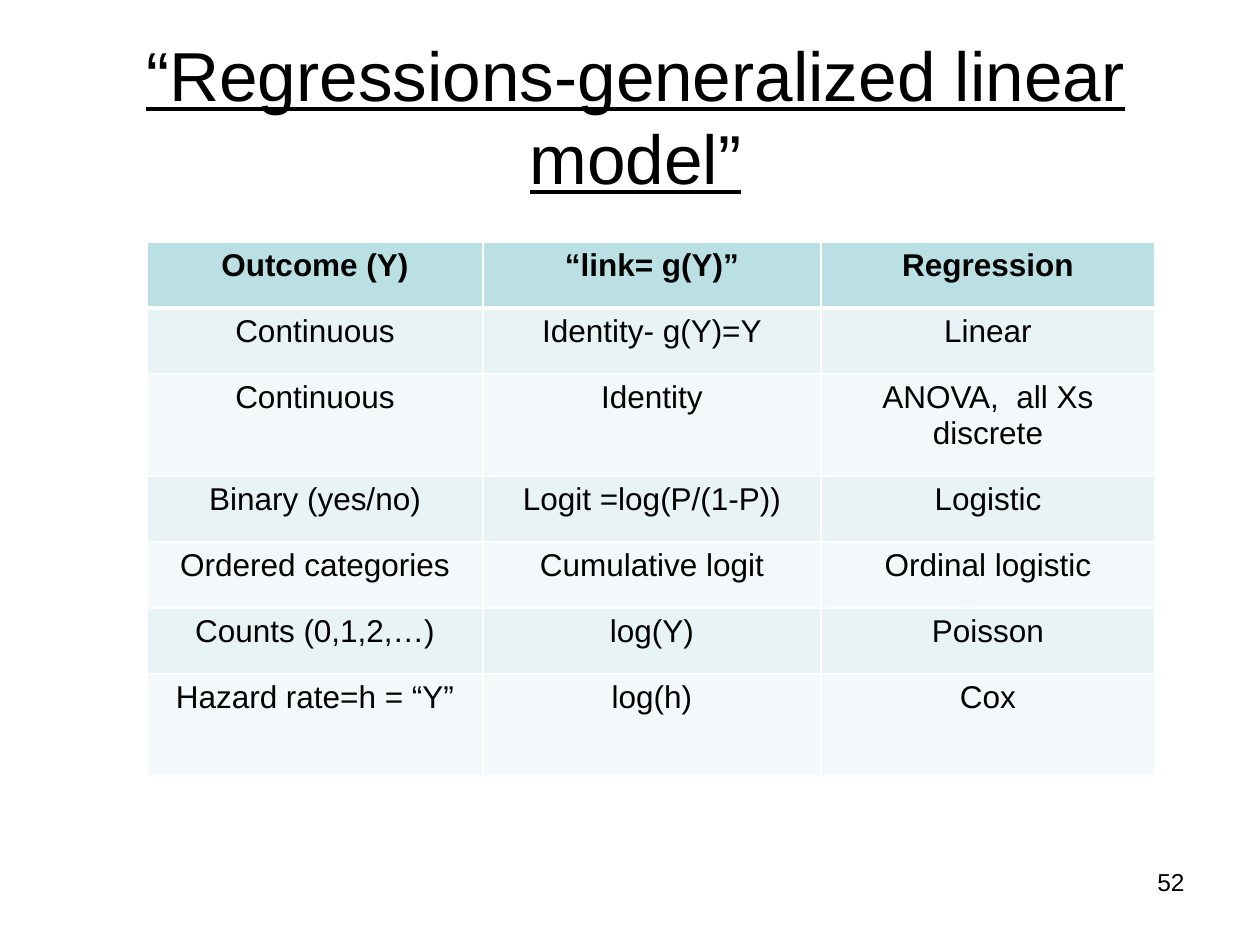
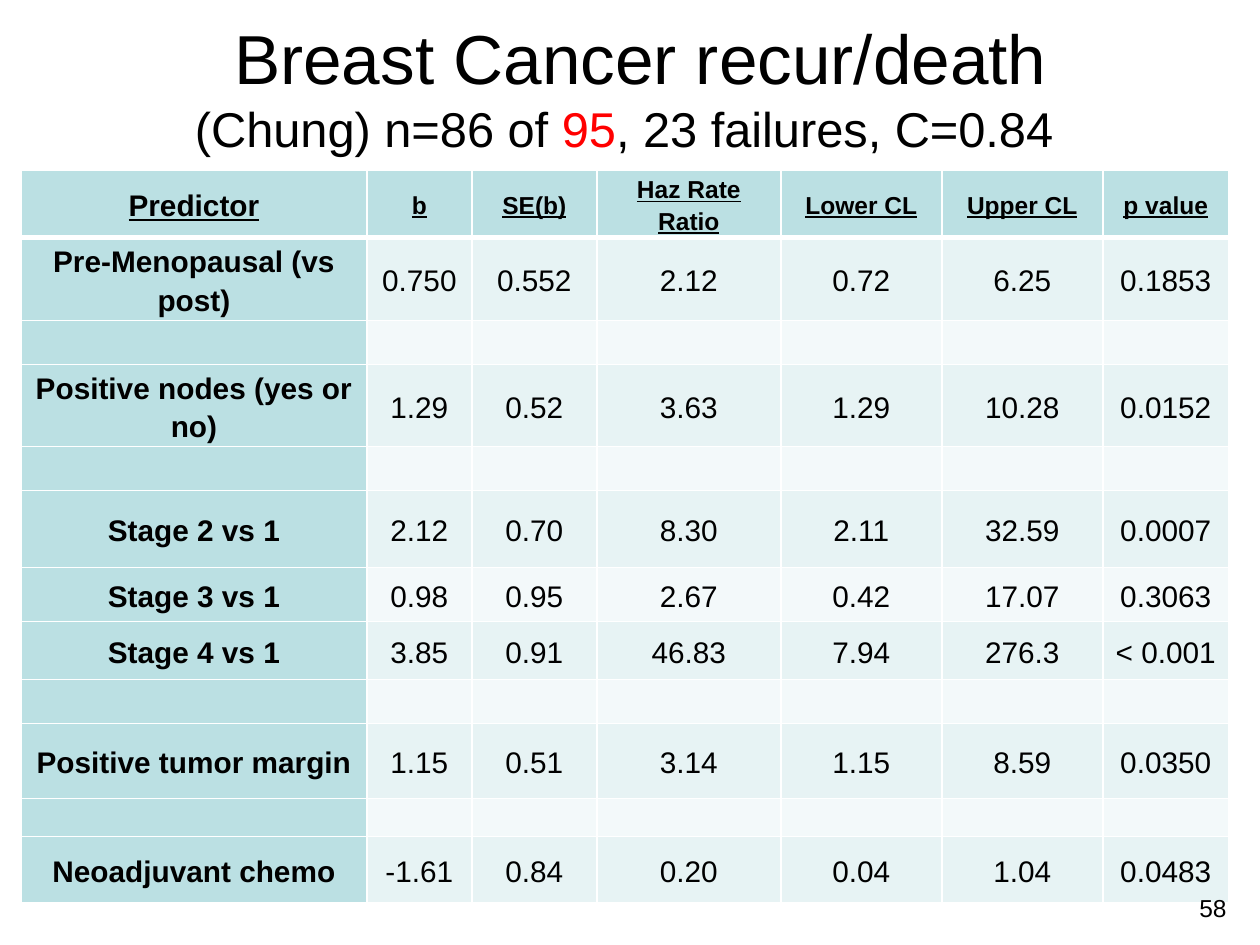
from lxml import etree
from pptx import Presentation, util as u
from pptx.dml.color import RGBColor
from pptx.enum import text as t
from pptx.oxml import ns

SCALE = u.Inches(1) / 126
FONT = "Arial"
BLACK = RGBColor(0, 0, 0)
RED = RGBColor(0xFF, 0, 0)
WHITE = RGBColor(0xFF, 0xFF, 0xFF)
TEAL = RGBColor(0xBB, 0xE0, 0xE3)
BANDS = RGBColor(0xE7, 0xF3, 0xF4), RGBColor(0xF3, 0xF9, 0xFA)
BIG, SMALL = 39.6, 27.9

LINKS = [
    ("Outcome (Y)", "“link= g(Y)”", "Regression"),
    ("Continuous", "Identity- g(Y)=Y", "Linear"),
    ("Continuous", "Identity", "ANOVA,  all Xs discrete"),
    ("Binary (yes/no)", "Logit =log(P/(1-P))", "Logistic"),
    ("Ordered categories", "Cumulative logit", "Ordinal logistic"),
    ("Counts (0,1,2,…)", "log(Y)", "Poisson"),
    ("Hazard rate=h = “Y”", "log(h)", "Cox"),
]

GAP = ("",) * 7
RISKS = [
    ("Predictor", "b", "SE(b)", "Haz Rate Ratio", "Lower CL", "Upper CL",
     "p value"),
    ("Pre-Menopausal (vs post)", "0.750", "0.552", "2.12", "0.72", "6.25",
     "0.1853"),
    GAP,
    ("Positive nodes (yes or no)", "1.29", "0.52", "3.63", "1.29", "10.28",
     "0.0152"),
    GAP,
    ("Stage 2 vs 1", "2.12", "0.70", "8.30", "2.11", "32.59", "0.0007"),
    ("Stage 3 vs 1", "0.98", "0.95", "2.67", "0.42", "17.07", "0.3063"),
    ("Stage 4 vs 1", "3.85", "0.91", "46.83", "7.94", "276.3", "< 0.001"),
    GAP,
    ("Positive tumor margin", "1.15", "0.51", "3.14", "1.15", "8.59",
     "0.0350"),
    GAP,
    ("Neoadjuvant chemo", "-1.61", "0.84", "0.20", "0.04", "1.04", "0.0483"),
]


def px(n):
    return u.Emu(round(n * SCALE))


def edge(cell, head):
    """Draw white cell borders, with a thick rule under the head row."""
    props = cell._tc.get_or_add_tcPr()
    for i, side in enumerate(("lnL", "lnR", "lnT", "lnB")):
        wide = 3 if head and side == "lnB" else 1
        line = etree.Element(ns.qn("a:" + side), w=str(u.Pt(wide)))
        fill = etree.SubElement(line, ns.qn("a:solidFill"))
        etree.SubElement(fill, ns.qn("a:srgbClr"), val=str(WHITE))
        props.insert(i, line)


class Deck:
    def __init__(self):
        self.prs = Presentation()
        self.prs.slide_width, self.prs.slide_height = px(1260), px(945)

    def page(self):
        self.slide = self.prs.slides.add_slide(self.prs.slide_layouts[6])

    def run(self, para, words, size, color=BLACK, bold=False, under=False):
        run = para.add_run()
        run.text = words
        font = run.font
        font.name, font.size, font.color.rgb = FONT, u.Pt(size), color
        font.bold, font.underline = bold, under

    def box(self, x, y, w, h, align):
        frame = self.slide.shapes.add_textbox(*map(px, (x, y, w, h))).text_frame
        frame.word_wrap = True
        para = frame.paragraphs[0]
        para.alignment = align
        return frame, para

    def title(self, x, y, w, h, *lines, under=False):
        """Each line is a list of (words, size, color) runs."""
        frame, para = self.box(x, y, w, h, t.PP_ALIGN.CENTER)
        frame.vertical_anchor = t.MSO_ANCHOR.MIDDLE
        for i, line in enumerate(lines):
            if i:
                para.add_line_break()
            for words, size, color in line:
                self.run(para, words, size, color, under=under)

    def number(self, x, y, w, num):
        para = self.box(x, y, w, 66, t.PP_ALIGN.RIGHT)[1]
        self.run(para, str(num), 14)

    def table(self, x, y, cols, rows, data, size, label=False, dense=False):
        """label tints the first column; dense trims insets, centres rows."""
        grid = self.slide.shapes.add_table(
            len(rows), len(cols), px(x), px(y), px(sum(cols)), px(sum(rows))
        ).table
        grid.first_row = grid.horz_banding = False
        for col, w in zip(grid.columns, cols):
            col.width = px(w)
        for r, (row, h) in enumerate(zip(data, rows)):
            grid.rows[r].height = px(h)
            for c, words in enumerate(row):
                cell = grid.cell(r, c)
                strong = r == 0 or (label and c == 0)
                cell.fill.solid()
                cell.fill.fore_color.rgb = TEAL if strong else BANDS[(r - 1) % 2]
                edge(cell, r == 0)
                para = cell.text_frame.paragraphs[0]
                para.alignment = t.PP_ALIGN.CENTER
                if dense:
                    cell.vertical_anchor = t.MSO_ANCHOR.MIDDLE
                    cell.margin_left = cell.margin_right = px(9)
                    cell.margin_top = cell.margin_bottom = 0
                    para.line_spacing = 1.15
                if words:
                    pts = 14 if dense and r == 0 and c else size
                    self.run(para, words, pts, bold=strong,
                             under=dense and r == 0)
                else:
                    etree.SubElement(para._p, ns.qn("a:endParaRPr"), sz="1200")


def main():
    deck = Deck()

    deck.page()
    deck.title(21, 31, 1229, 168,
               [("“Regressions-generalized linear model”", BIG, BLACK)],
               under=True)
    deck.number(903, 861, 294, 52)
    deck.table(147, 242, (336, 338, 334), (66, 66, 102, 66, 66, 66, 102),
               LINKS, 18)

    deck.page()
    deck.title(64, 13, 1134, 147,
               [(" Breast Cancer recur/death", BIG, BLACK)],
               [("(Chung) n=86 of ", SMALL, BLACK), ("95", SMALL, RED),
                (", 23 failures, C=0.84 ", SMALL, BLACK)])
    deck.table(21, 170, (346, 105, 125, 184, 161, 161, 126),
               (63, 83, 44, 82, 44, 77, 54, 58, 44, 75, 38, 66),
               RISKS, 17, label=True, dense=True)
    deck.number(1134, 887, 105, 58)

    deck.prs.save("out.pptx")


if __name__ == "__main__":
    main()
